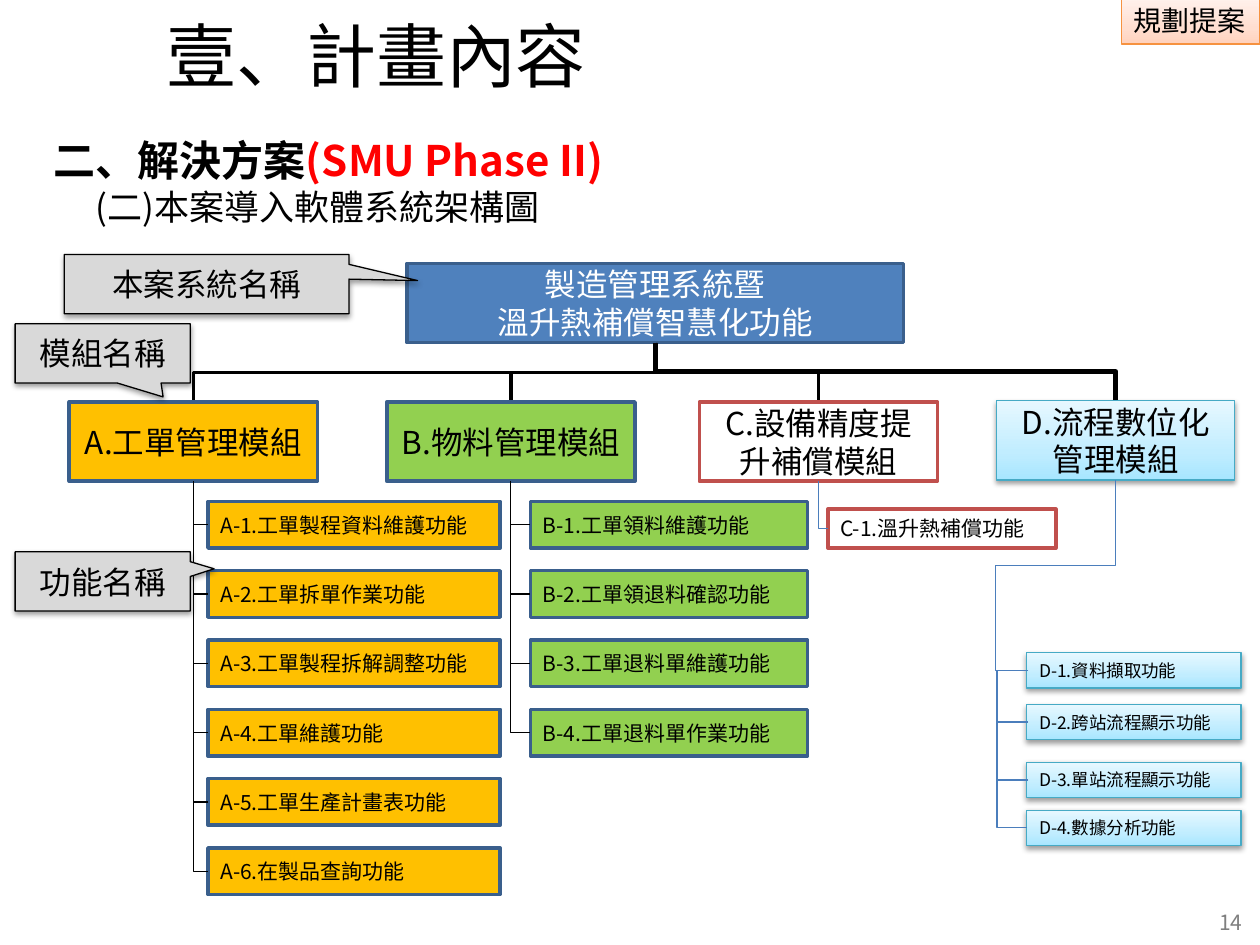
from lxml import etree
from pptx import Presentation
from pptx.dml.color import RGBColor
from pptx.enum import shapes, text
from pptx.oxml import ns
from pptx.util import Inches, Pt

FONT = "Noto Sans CJK SC"
BLACK = RGBColor(0x00, 0x00, 0x00)
WHITE = RGBColor(0xFF, 0xFF, 0xFF)
RED = RGBColor(0xFF, 0x00, 0x00)
GRAY = RGBColor(0x7F, 0x7F, 0x7F)
LIGHT_GRAY = RGBColor(0xD9, 0xD9, 0xD9)
BLUE = RGBColor(0x4F, 0x81, 0xBD)
NAVY = RGBColor(0x3A, 0x5F, 0x8C)
LINK_BLUE = RGBColor(0x4B, 0x7E, 0xBC)
AMBER = RGBColor(0xFF, 0xC0, 0x00)
GREEN = RGBColor(0x92, 0xD0, 0x50)
BRICK = RGBColor(0xC0, 0x50, 0x4D)
TEAL = RGBColor(0x46, 0xAA, 0xC5)
ORANGE = RGBColor(0xF6, 0x92, 0x40)
# Gradients: (position in percent, colour), running upwards
SKY = [(0, "A7E6FF"), (35, "C1EDFF"), (100, "E7F8FF")]
PEACH = [(0, "FFD2BD"), (35, "FFDED0"), (100, "FFF2ED")]

LEFT, CENTER, RIGHT = text.PP_ALIGN.LEFT, text.PP_ALIGN.CENTER, text.PP_ALIGN.RIGHT
TOP, MIDDLE = text.MSO_ANCHOR.TOP, text.MSO_ANCHOR.MIDDLE
RECTANGLE = shapes.MSO_SHAPE.RECTANGLE
CALLOUT = shapes.MSO_SHAPE.RECTANGULAR_CALLOUT

TITLE = "壹、計畫內容"
TAG = "規劃提案"
PAGE_NUMBER = "14"
SYSTEM = ["製造管理系統暨", "溫升熱補償智慧化功能"]
SYSTEM_BOX = (3.23, 2.09, 3.94, 0.63)

ROW_TOPS = [3.98 + 0.55 * row for row in range(6)]
MODULES = [
    dict(name="A.工單管理模組", box=(0.55, 3.19, 1.97, 0.63), fill=AMBER, line=NAVY,
         link=BLACK, trunk=2, left=1.65, size=(2.32, 0.37), tops=ROW_TOPS,
         functions=["A-1.工單製程資料維護功能", "A-2.工單拆單作業功能",
                    "A-3.工單製程拆解調整功能", "A-4.工單維護功能",
                    "A-5.工單生產計畫表功能", "A-6.在製品查詢功能"]),
    dict(name="B.物料管理模組", box=(3.07, 3.19, 1.97, 0.63), fill=GREEN, line=NAVY,
         link=BLACK, trunk=2, left=4.21, size=(2.2, 0.37), tops=ROW_TOPS,
         functions=["B-1.工單領料維護功能", "B-2.工單領退料確認功能",
                    "B-3.工單退料單維護功能", "B-4.工單退料單作業功能"]),
    dict(name="C.設備精度提升補償模組", box=(5.55, 3.19, 1.89, 0.63), fill=WHITE,
         line=BRICK, link=LINK_BLUE, trunk=2, left=6.57, size=(1.81, 0.31),
         tops=[4.04], functions=["C-1.溫升熱補償功能"]),
    dict(name="D.流程數位化管理模組", box=(7.91, 3.18, 1.89, 0.63), fill=SKY,
         line=TEAL, link=LINK_BLUE, trunk=3, left=8.15, size=(1.7, 0.28),
         tops=[5.18, 5.59, 6.05, 6.43], chained=True, line_width=0.75,
         shadow=True, font_size=10,
         functions=["D-1.資料擷取功能", "D-2.跨站流程顯示功能",
                    "D-3.單站流程顯示功能", "D-4.數據分析功能"]),
]
CALLOUTS = [
    ("本案系統名稱", (0.51, 2.02, 2.26, 0.47), (0.741, -0.059)),
    ("模組名稱", (0.12, 2.57, 1.39, 0.47), (0.345, 0.735)),
    ("功能名稱", (0.12, 4.38, 1.39, 0.47), (0.636, -0.213)),
]


def write(frame, paragraphs, size=18, color=BLACK, bold=False, align=LEFT,
          anchor=MIDDLE, wrap=True, indents=()):
    """Each paragraph is a string or a list of (text, format overrides) runs."""
    frame.word_wrap = wrap
    frame.auto_size = text.MSO_AUTO_SIZE.NONE
    frame.vertical_anchor = anchor
    for index, runs in enumerate(paragraphs):
        paragraph = frame.paragraphs[0] if index == 0 else frame.add_paragraph()
        paragraph.alignment = align
        if indents:
            paragraph._p.get_or_add_pPr().set("marL", str(Inches(indents[index])))
        for words, changes in [(runs, {})] if isinstance(runs, str) else runs:
            run = paragraph.add_run()
            run.text = words
            font = run.font
            font.name = FONT
            font.size = Pt(changes.get("size", size))
            font.bold = changes.get("bold", bold)
            font.color.rgb = changes.get("color", color)
            east_asian = etree.SubElement(run._r.get_or_add_rPr(), ns.qn("a:ea"))
            east_asian.set("typeface", FONT)


def fill_gradient(shape, stops):
    shape.fill.gradient()
    gradient = shape._element.spPr.find(ns.qn("a:gradFill"))
    stop_list = gradient.find(ns.qn("a:gsLst"))
    for stop in list(stop_list):
        stop_list.remove(stop)
    for position, color in stops:
        stop = etree.SubElement(stop_list, ns.qn("a:gs"), pos=str(position * 1000))
        etree.SubElement(stop, ns.qn("a:srgbClr"), val=color)
    gradient.find(ns.qn("a:lin")).set("ang", str(270 * 60000))


def add_box(slide, box, paragraphs, fill, line, line_width=2, shadow=False,
            kind=RECTANGLE, **text_format):
    shape = slide.shapes.add_shape(kind, *map(Inches, box))
    if isinstance(fill, list):
        fill_gradient(shape, fill)
    else:
        shape.fill.solid()
        shape.fill.fore_color.rgb = fill
    shape.line.color.rgb = line
    shape.line.width = Pt(line_width)
    shape.shadow.inherit = False
    if shadow:
        effects = shape._element.spPr.find(ns.qn("a:effectLst"))
        outer = etree.SubElement(effects, ns.qn("a:outerShdw"), blurRad=str(Pt(3.1)),
                                 dist=str(Pt(1.6)), dir=str(90 * 60000), rotWithShape="0")
        color = etree.SubElement(outer, ns.qn("a:srgbClr"), val="000000")
        etree.SubElement(color, ns.qn("a:alpha"), val="38000")
    write(shape.text_frame, paragraphs, **text_format)
    return shape


def add_elbow(slide, start, end, color, width, bends=3, adjustments=(), downward=True):
    """Bent connector; a downward one leaves its start vertically."""
    (x1, y1), (x2, y2) = start, end
    connector = slide.shapes.add_connector(
        shapes.MSO_CONNECTOR.ELBOW, *map(Inches, (x1, y1, x2, y2)))
    connector.line.color.rgb = color
    connector.line.width = Pt(width)
    properties = connector._element.spPr
    etree.SubElement(properties, ns.qn("a:effectLst"))
    if downward:
        across, down = abs(x2 - x1), y2 - y1
        connector.left = Inches((x1 + x2 - down) / 2)
        connector.top = Inches((y1 + y2 - across) / 2)
        connector.width, connector.height = Inches(down), Inches(across)
        transform = properties.find(ns.qn("a:xfrm"))
        transform.set("rot", str((90 if x2 < x1 else 270) * 60000))
        transform.set("flipH", "0" if x2 < x1 else "1")
    geometry = properties.find(ns.qn("a:prstGeom"))
    geometry.set("prst", f"bentConnector{bends}")
    guides = geometry.find(ns.qn("a:avLst"))
    for number, value in enumerate(adjustments, 1):
        etree.SubElement(guides, ns.qn("a:gd"), name=f"adj{number}",
                         fmla=f"val {round(value * 100000)}")


def add_module(slide, module):
    left, top, width, height = module["box"]
    stem = (left + width / 2, top + height)
    style = dict(fill=module["fill"], line=module["line"],
                 line_width=module.get("line_width", 2), shadow=module.get("shadow", False))
    root = (SYSTEM_BOX[0] + SYSTEM_BOX[2] / 2, SYSTEM_BOX[1] + SYSTEM_BOX[3])
    add_elbow(slide, root, (stem[0], top), BLACK, module["trunk"], adjustments=[0.5])
    add_box(slide, module["box"], [module["name"]], align=CENTER, **style)

    chained = module.get("chained", False)
    previous = None
    for name, row_top in zip(module["functions"], module["tops"]):
        box_left, (box_width, box_height) = module["left"], module["size"]
        entry = (box_left, row_top + box_height / 2)
        add_box(slide, (box_left, row_top, box_width, box_height), [name],
                size=module.get("font_size", 12), **style)
        if not chained:
            add_elbow(slide, stem, entry, module["link"], 0.75, bends=2)
        elif previous is None:
            add_elbow(slide, stem, entry, module["link"], 0.75, bends=4,
                      adjustments=[0.45, 1.35])
        else:
            add_elbow(slide, (previous[0] + 0.01, previous[1]), entry, module["link"],
                      0.75, adjustments=[25], downward=False)
        previous = entry


def main():
    presentation = Presentation()
    presentation.slide_width, presentation.slide_height = Inches(10), Inches(7.5)
    slide = presentation.slides.add_slide(presentation.slide_layouts[5])

    title = slide.shapes.title
    title.left, title.top, title.width, title.height = map(Inches, (1.22, 0.05, 6.69, 0.68))
    write(title.text_frame, [TITLE], size=40, anchor=TOP)

    add_box(slide, (8.9, -0.02, 1.1, 0.37), [TAG], PEACH, ORANGE, line_width=0.75,
            size=16, anchor=TOP, wrap=False)
    heading = slide.shapes.add_textbox(*map(Inches, (0.26, 1.02, 6.69, 0.84)))
    write(heading.text_frame,
          [[("二、解決方案", {}), ("(SMU Phase II)", {"color": RED})],
           [("(二)本案導入軟體系統架構圖", {"size": 20, "bold": False})]],
          size=24, bold=True, anchor=TOP, indents=(0.07, 0.4))

    add_box(slide, SYSTEM_BOX, SYSTEM, BLUE, NAVY, color=WHITE, align=CENTER)
    for module in MODULES:
        add_module(slide, module)
    for label, box, tip in CALLOUTS:
        callout = add_box(slide, box, [label], LIGHT_GRAY, BLACK, line_width=0.75,
                          shadow=True, kind=CALLOUT, align=CENTER)
        callout.adjustments[0], callout.adjustments[1] = tip

    number = slide.shapes.add_textbox(*map(Inches, (9.21, 7.16, 0.75, 0.32)))
    write(number.text_frame, [PAGE_NUMBER], size=12, color=GRAY, align=RIGHT)
    presentation.save("out.pptx")


if __name__ == "__main__":
    main()
